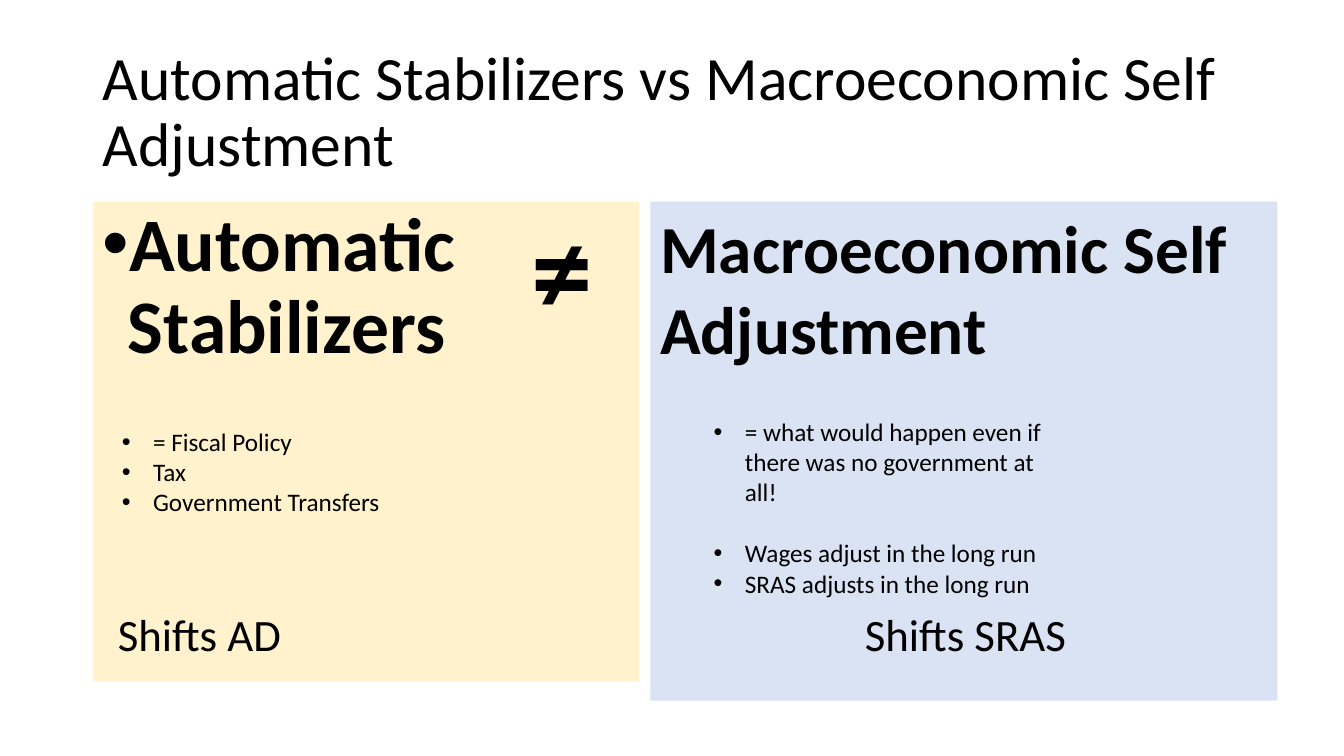
from dataclasses import dataclass

from lxml import etree
from pptx import Presentation
from pptx.dml.color import RGBColor
from pptx.enum.shapes import MSO_SHAPE
from pptx.enum.text import MSO_ANCHOR, PP_ALIGN
from pptx.oxml.ns import qn
from pptx.util import Inches, Pt

RECTANGLE = MSO_SHAPE.RECTANGLE
TOP, MIDDLE = MSO_ANCHOR.TOP, MSO_ANCHOR.MIDDLE
LEFT = PP_ALIGN.LEFT


@dataclass(frozen=True)
class Theme:
    font: str = "Calibri"
    ink: RGBColor = RGBColor(0x00, 0x00, 0x00)
    cream: RGBColor = RGBColor(0xFF, 0xF2, 0xCC)
    pale_blue: RGBColor = RGBColor(0xDA, 0xE3, 0xF3)
    title: int = 44
    stabilizers: int = 54
    adjustment: int = 48
    sign: int = 88
    points: int = 18
    effect: int = 32


THEME = Theme()


def add_bullet(paragraph, indent):
    properties = paragraph._p.get_or_add_pPr()
    properties.set("marL", str(Inches(indent)))
    properties.set("indent", str(-Inches(indent)))
    etree.SubElement(properties, qn("a:buFont")).set("typeface", "Arial")
    etree.SubElement(properties, qn("a:buChar")).set("char", "•")


def write(holder, lines, size, bold=False, anchor=TOP, wrap=True,
          spacing=None, before=0, indent=0, gap_after_first=0):
    frame = holder.text_frame
    frame.word_wrap = wrap
    frame.vertical_anchor = anchor
    for index, line in enumerate(lines):
        paragraph = frame.add_paragraph() if index else frame.paragraphs[0]
        paragraph.alignment = LEFT
        paragraph.space_before = Pt(before)
        if spacing:
            paragraph.line_spacing = spacing
        if index == 0 and gap_after_first:
            paragraph.space_after = Pt(gap_after_first)
        if indent:
            add_bullet(paragraph, indent)
        run = paragraph.add_run()
        run.text = line
        run.font.name = THEME.font
        run.font.size = Pt(size)
        run.font.bold = bold
        run.font.color.rgb = THEME.ink


def add_words(slide, box, lines, size, **style):
    words = slide.shapes.add_textbox(*map(Inches, box))
    write(words, lines, size, **style)


def add_panel(slide, box, color, heading, heading_size, points, points_at,
              effect, effect_at, gap_after_first=0, **heading_style):
    left, top, width, height = box
    panel = slide.shapes.add_shape(RECTANGLE, *map(Inches, box))
    panel.shadow.inherit = False
    panel.fill.solid()
    panel.fill.fore_color.rgb = color
    panel.line.fill.background()
    write(panel, [heading], heading_size, bold=True, **heading_style)

    dx, dy, points_width, points_height = points_at
    add_words(slide, (left + dx, top + dy, points_width, points_height),
              points, THEME.points, indent=0.31,
              gap_after_first=gap_after_first)

    dx, dy, effect_width, effect_height = effect_at
    add_words(slide, (left + dx, top + dy, effect_width, effect_height),
              [effect], THEME.effect)


def add_comparison(slide, box):
    left, top, width, height = box
    add_panel(
        slide, (left, top, 5.42, 4.76), THEME.cream,
        "Automatic Stabilizers", THEME.stabilizers,
        ["= Fiscal Policy", "Tax", "Government Transfers"],
        (0.19, 2.18, 3.62, 1.01), "Shifts AD", (0.15, 3.97, 4.16, 0.64),
        spacing=0.9, before=10, indent=0.25)
    add_panel(
        slide, (left + 5.53, top, width - 5.53, height), THEME.pale_blue,
        "Macroeconomic Self Adjustment", THEME.adjustment,
        ["= what would happen even if there was no government at all!",
         "Wages adjust in the long run", "SRAS adjusts in the long run"],
        (0.53, 2.08, 3.62, 1.92), "Shifts SRAS", (2.03, 3.97, 2.23, 0.64),
        gap_after_first=22)
    add_words(slide, (left + 4.25, top - 0.15, 0.82, 1.58), ["≠"],
              THEME.sign, bold=True, wrap=False)


def main():
    deck = Presentation()
    deck.slide_width, deck.slide_height = Inches(13.33), Inches(7.5)
    slide = deck.slides.add_slide(deck.slide_layouts[6])
    add_words(slide, (0.92, 0.4, 11.5, 1.45),
              ["Automatic Stabilizers vs Macroeconomic Self Adjustment"],
              THEME.title, anchor=MIDDLE, spacing=0.9)
    add_comparison(slide, (0.92, 2, 11.75, 4.95))
    deck.save("out.pptx")


if __name__ == "__main__":
    main()
